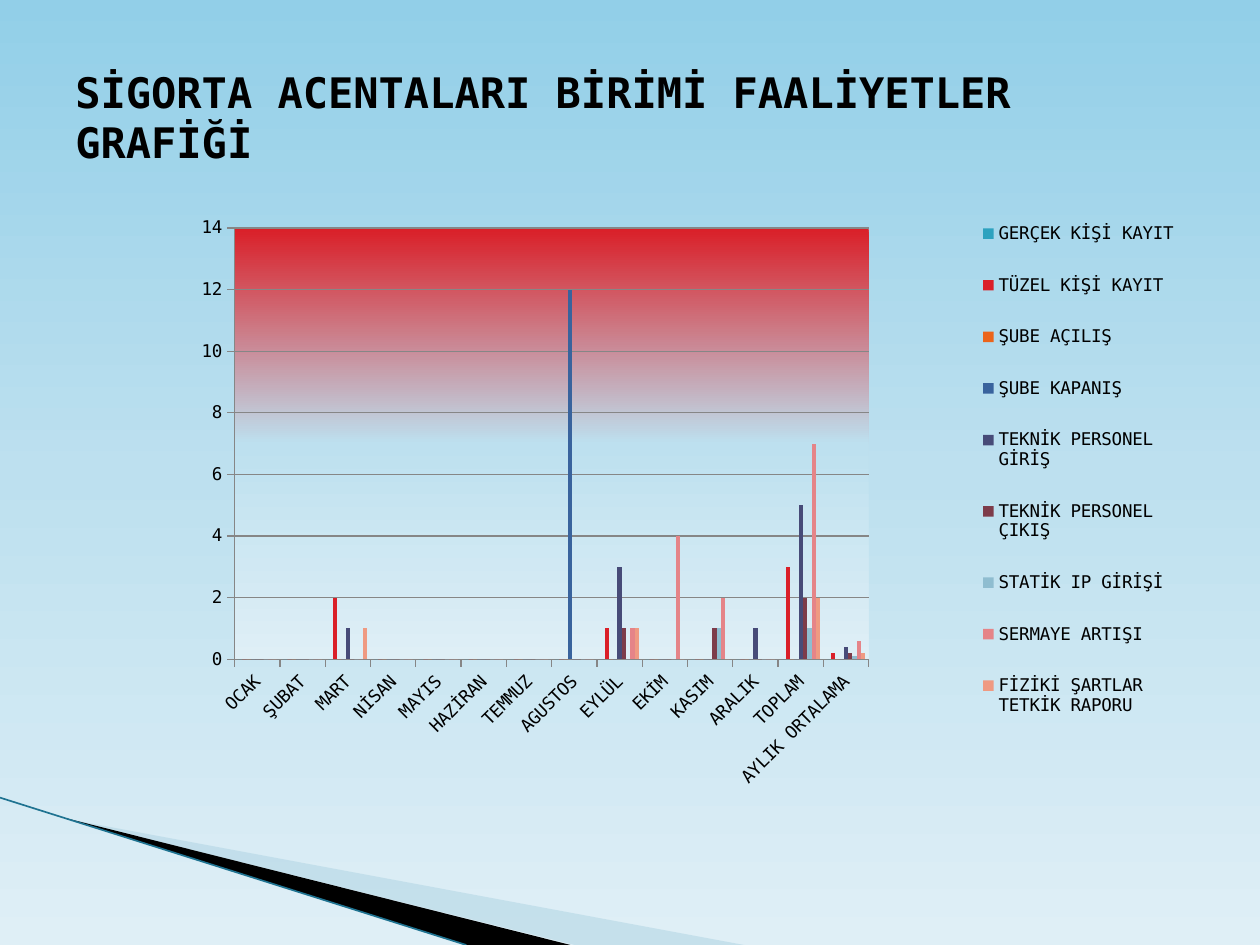
from lxml import etree
from pptx import Presentation
from pptx.chart.data import CategoryChartData
from pptx.dml.color import RGBColor
from pptx.enum.chart import XL_CHART_TYPE, XL_LEGEND_POSITION, XL_TICK_MARK
from pptx.enum.shapes import MSO_CONNECTOR
from pptx.enum.text import MSO_ANCHOR
from pptx.oxml import parse_xml
from pptx.oxml.ns import nsdecls, qn
from pptx.util import Cm, Pt

FONT = "DejaVu Sans Mono"
BLACK = RGBColor(0x00, 0x00, 0x00)
GREY = RGBColor(0x86, 0x86, 0x86)
TEAL = RGBColor(0x1F, 0x73, 0x91)
PALE_BLUE = RGBColor(0xA0, 0xCB, 0xDC)
SKY = RGBColor(0x92, 0xCF, 0xE8)
LIGHT_SKY = RGBColor(0xBD, 0xE0, 0xEF)
MIST = RGBColor(0xDF, 0xEF, 0xF6)
BLUE = RGBColor(0x2D, 0xA2, 0xBF)
RED = RGBColor(0xDA, 0x1F, 0x28)
ORANGE = RGBColor(0xEB, 0x64, 0x1B)
NAVY = RGBColor(0x39, 0x63, 0x9D)
INDIGO = RGBColor(0x47, 0x4B, 0x78)
WINE = RGBColor(0x7D, 0x3C, 0x4A)
SOFT_BLUE = RGBColor(0x8F, 0xBD, 0xD0)
SOFT_RED = RGBColor(0xE5, 0x84, 0x88)
SOFT_ORANGE = RGBColor(0xEF, 0x9A, 0x82)


def vertical_gradient(top_color):
    colors = (top_color, LIGHT_SKY, MIST)
    stops = "".join(
        f'<a:gs pos="{index * 50000}"><a:srgbClr val="{color}"/></a:gs>'
        for index, color in enumerate(colors)
    )
    return parse_xml(
        f'<a:gradFill {nsdecls("a")} rotWithShape="1"><a:gsLst>{stops}</a:gsLst>'
        '<a:lin ang="5400000" scaled="0"/></a:gradFill>'
    )


def manual_layout(x, y, w, h, inner=False):
    target = '<c:layoutTarget val="inner"/>' if inner else ""
    return parse_xml(
        f'<c:layout {nsdecls("c")}><c:manualLayout>{target}'
        '<c:xMode val="edge"/><c:yMode val="edge"/>'
        f'<c:x val="{x}"/><c:y val="{y}"/><c:w val="{w}"/><c:h val="{h}"/>'
        "</c:manualLayout></c:layout>"
    )


presentation = Presentation()
presentation.slide_width, presentation.slide_height = Cm(25.4), Cm(19.05)
slide = presentation.slides.add_slide(presentation.slide_layouts[6])

# Background
slide.background.fill.solid()
solid_fill = next(slide.background._cSld.iter(qn("a:solidFill")))
solid_fill.getparent().replace(solid_fill, vertical_gradient(SKY))

# Corner wedges
wedges = [
    (PALE_BLUE, 40, [(1.4, 16.52), (15.0, 19.05), (11.58, 19.05)]),
    (BLACK, 100, [(1.35, 16.5), (11.5, 19.05), (9.4, 19.05)]),
]
for color, opacity, points in wedges:
    corners = [(Cm(x), Cm(y)) for x, y in points]
    builder = slide.shapes.build_freeform(*corners[0])
    builder.add_line_segments(corners[1:], close=True)
    shape = builder.convert_to_shape()
    shape.shadow.inherit = False
    shape.fill.solid()
    shape.fill.fore_color.rgb = color
    shape.line.fill.background()
    if opacity < 100:
        color_element = shape._element.spPr.find(f"{qn('a:solidFill')}/{qn('a:srgbClr')}")
        etree.SubElement(color_element, qn("a:alpha"), val=str(opacity * 1000))

# Corner line
connector = slide.shapes.add_connector(
    MSO_CONNECTOR.STRAIGHT, Cm(0), Cm(16.08), Cm(9.4), Cm(19.05)
)
connector.line.color.rgb = TEAL
connector.line.width = Pt(0.95)
etree.SubElement(connector._element.spPr, qn("a:effectLst"))

# Title
title = slide.shapes.add_textbox(Cm(1.27), Cm(0.76), Cm(22.86), Cm(3.18))
title.text_frame.word_wrap = True
title.text_frame.vertical_anchor = MSO_ANCHOR.MIDDLE
paragraph = title.text_frame.paragraphs[0]
paragraph.text = "SİGORTA ACENTALARI BİRİMİ FAALİYETLER GRAFİĞİ"
paragraph.font.color.rgb = BLACK
for name, value in {"name": FONT, "size": Pt(24), "bold": True}.items():
    setattr(paragraph.font, name, value)

# Chart data
months = ["OCAK", "ŞUBAT", "MART", "NİSAN", "MAYIS", "HAZİRAN", "TEMMUZ",
          "AGUSTOS", "EYLÜL", "EKİM", "KASIM", "ARALIK"]
activities = [
    ("GERÇEK KİŞİ KAYIT", BLUE, [0, 0, 0, 0, 0, 0, 0, 0, 0, 0, 0, 0, 0, 0]),
    ("TÜZEL KİŞİ KAYIT", RED, [0, 0, 2, 0, 0, 0, 0, 0, 1, 0, 0, 0, 3, 0.2]),
    ("ŞUBE AÇILIŞ", ORANGE, [0, 0, 0, 0, 0, 0, 0, 0, 0, 0, 0, 0, 0, 0]),
    ("ŞUBE KAPANIŞ", NAVY, [0, 0, 0, 0, 0, 0, 0, 12, 0, 0, 0, 0, 0, 0]),
    ("TEKNİK PERSONEL GİRİŞ", INDIGO, [0, 0, 1, 0, 0, 0, 0, 0, 3, 0, 0, 1, 5, 0.4]),
    ("TEKNİK PERSONEL ÇIKIŞ", WINE, [0, 0, 0, 0, 0, 0, 0, 0, 1, 0, 1, 0, 2, 0.2]),
    ("STATİK IP GİRİŞİ", SOFT_BLUE, [0, 0, 0, 0, 0, 0, 0, 0, 0, 0, 1, 0, 1, 0.1]),
    ("SERMAYE ARTIŞI", SOFT_RED, [0, 0, 0, 0, 0, 0, 0, 0, 1, 4, 2, 0, 7, 0.6]),
    ("FİZİKİ ŞARTLAR TETKİK RAPORU", SOFT_ORANGE,
     [0, 0, 1, 0, 0, 0, 0, 0, 1, 0, 0, 0, 2, 0.2]),
]
chart_data = CategoryChartData()
chart_data.categories = months + ["TOPLAM", "AYLIK ORTALAMA"]
for name, color, values in activities:
    chart_data.add_series(name, values)

# Chart
chart = slide.shapes.add_chart(
    XL_CHART_TYPE.COLUMN_CLUSTERED, Cm(1.3), Cm(3.73), Cm(22.71), Cm(14), chart_data
).chart
chart.has_title = False
chart.font.name = FONT
chart.font.size = Pt(10)
chart.font.color.rgb = BLACK
plot = chart.plots[0]
plot.vary_by_categories = False
plot.gap_width = 150
plot.overlap = 0
for series, (name, color, values) in zip(plot.series, activities):
    series.format.fill.solid()
    series.format.fill.fore_color.rgb = color

# Axes
value_axis, category_axis = chart.value_axis, chart.category_axis
for name, value in {"minimum_scale": 0, "maximum_scale": 14, "major_unit": 2,
                    "has_major_gridlines": True}.items():
    setattr(value_axis, name, value)
for axis in (value_axis, category_axis):
    axis.major_tick_mark = XL_TICK_MARK.OUTSIDE
    axis.format.line.color.rgb = GREY
value_axis.major_gridlines.format.line.color.rgb = GREY
category_axis.tick_labels.font.size = Pt(10)
category_axis._element.find(f"{qn('c:txPr')}/{qn('a:bodyPr')}").set("rot", "-2700000")

# Plot area
plot_area = chart._chartSpace.chart.plotArea
for layout in plot_area.findall(qn("c:layout")):
    plot_area.remove(layout)
plot_area.insert(0, manual_layout(0.151, 0.062, 0.563, 0.621, inner=True))
etree.SubElement(plot_area, qn("c:spPr")).append(vertical_gradient(RED))

# Legend
chart.has_legend = True
chart.legend.position = XL_LEGEND_POSITION.RIGHT
chart.legend.include_in_layout = False
legend_element = chart.legend._element
for layout in legend_element.findall(qn("c:layout")):
    legend_element.remove(layout)
legend_element.find(qn("c:legendPos")).addnext(manual_layout(0.81, 0.01, 0.18, 0.8))

presentation.save("out.pptx")
